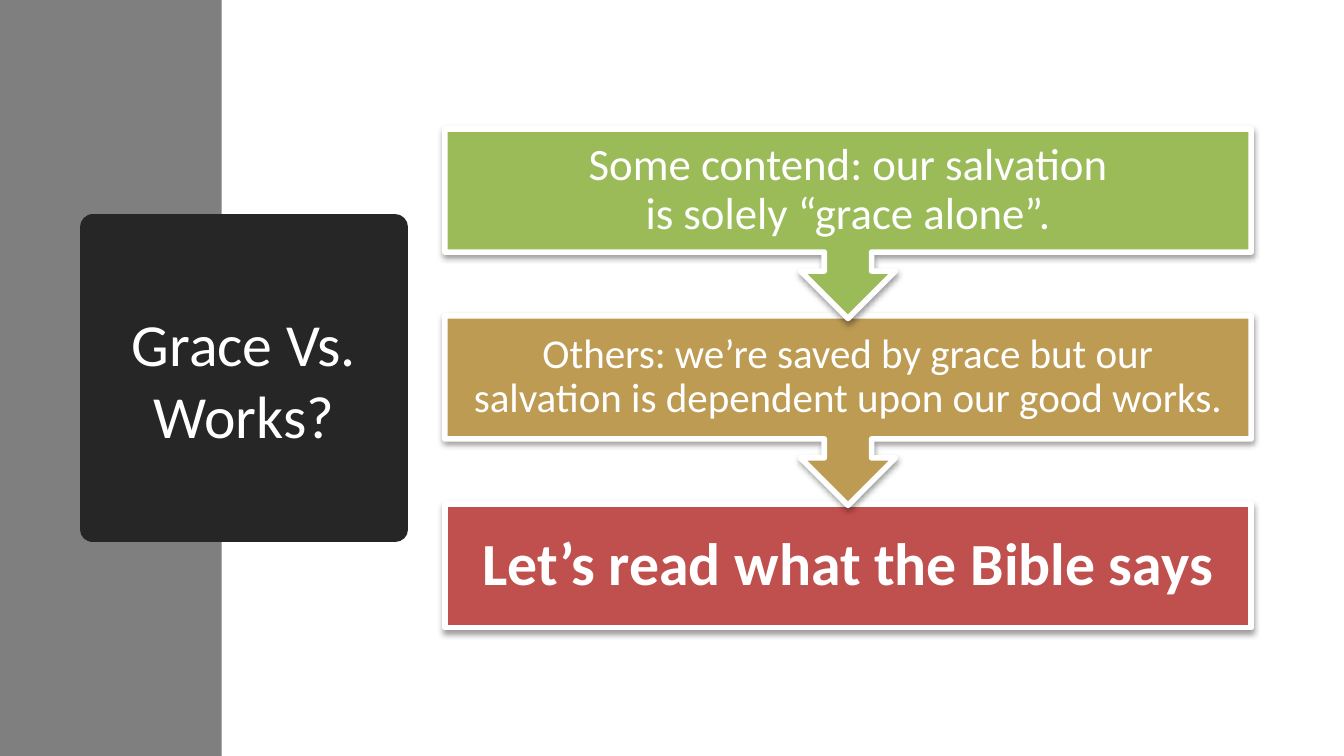
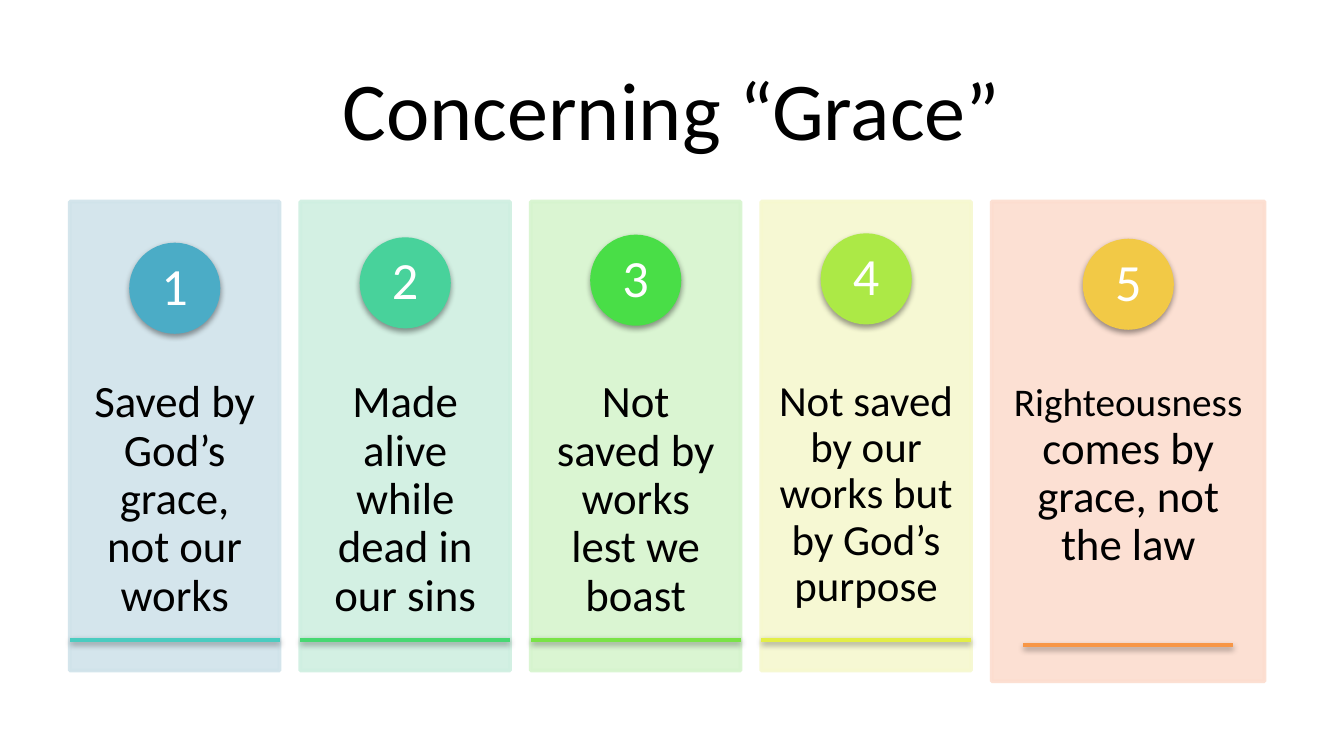
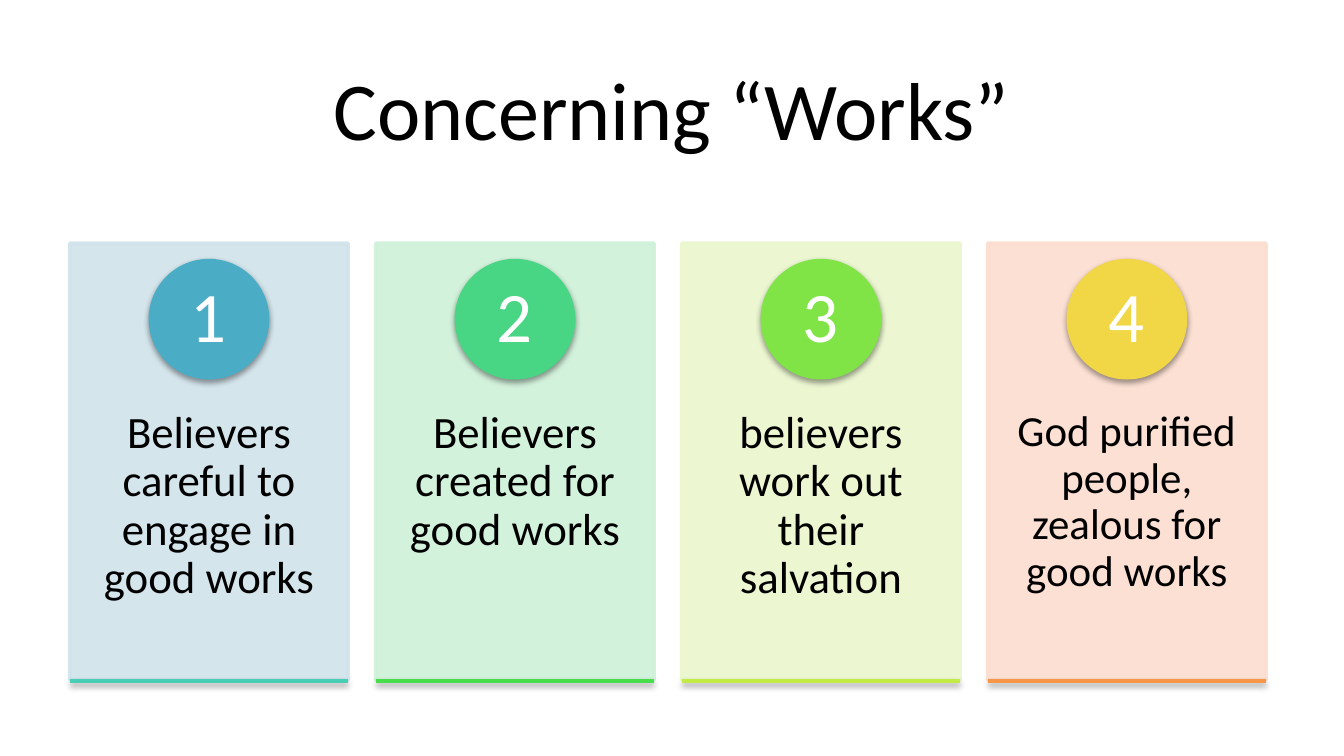
import pptx
import pptx.dml.color
import pptx.enum.shapes
import pptx.enum.text
import pptx.oxml
import pptx.oxml.ns
import pptx.util
from lxml import etree

RGB = pptx.dml.color.RGBColor
SHAPE = pptx.enum.shapes.MSO_SHAPE
MIDDLE = pptx.enum.text.MSO_ANCHOR.MIDDLE
TOP = pptx.enum.text.MSO_ANCHOR.TOP
CENTER = pptx.enum.text.PP_ALIGN.CENTER

FONT = "Calibri"
WHITE = RGB(0xFF, 0xFF, 0xFF)
BLACK = RGB(0x00, 0x00, 0x00)
GRAY = RGB(0x7F, 0x7F, 0x7F)
CHARCOAL = RGB(0x26, 0x26, 0x26)
RED = RGB(0xC0, 0x50, 0x4D)
TAN = RGB(0xBD, 0x9B, 0x53)
GREEN = RGB(0x9B, 0xBB, 0x59)
PALE_BLUE = RGB(0xD0, 0xE3, 0xEA)
PALE_TEAL = RGB(0xCF, 0xEF, 0xE1)
PALE_MINT = RGB(0xCF, 0xF1, 0xD9)
PALE_GREEN = RGB(0xD6, 0xF4, 0xCE)
PALE_LIME = RGB(0xEB, 0xF7, 0xCE)
PALE_YELLOW = RGB(0xF6, 0xF8, 0xCF)
PALE_ORANGE = RGB(0xFC, 0xDD, 0xCF)
BLUE = RGB(0x4B, 0xAC, 0xC6)
TURQUOISE = RGB(0x4A, 0xCC, 0xC0)
AQUA = RGB(0x49, 0xCE, 0xB6)
SEA = RGB(0x48, 0xD2, 0x9B)
MINT = RGB(0x48, 0xD6, 0x84)
EMERALD = RGB(0x47, 0xD8, 0x72)
VIVID_GREEN = RGB(0x47, 0xDD, 0x4B)
BRIGHT_GREEN = RGB(0x49, 0xDE, 0x47)
SPRING = RGB(0x79, 0xE3, 0x46)
GRASS = RGB(0x80, 0xE4, 0x46)
LIME = RGB(0xAC, 0xE9, 0x46)
CHARTREUSE = RGB(0xC3, 0xEB, 0x46)
YELLOW = RGB(0xE3, 0xEE, 0x46)
GOLD = RGB(0xF1, 0xD7, 0x46)
AMBER = RGB(0xF2, 0xC9, 0x46)
ORANGE = RGB(0xF7, 0x96, 0x46)

deck = pptx.Presentation()
deck.slide_width = pptx.util.Inches(10)
deck.slide_height = deck.slide_width * 9 // 16
UNIT = deck.slide_width / 100


def add_shadow(item):
    item.element.spPr.append(pptx.oxml.parse_xml(
        f'<a:effectLst {pptx.oxml.ns.nsdecls("a")}>'
        '<a:outerShdw blurRad="40000" dist="20000" dir="5400000" rotWithShape="0">'
        '<a:srgbClr val="000000"><a:alpha val="38000"/></a:srgbClr>'
        '</a:outerShdw></a:effectLst>'))


def add_block(slide, kind, box, fill, outline, weight, runs, color, insets, anchor=MIDDLE):
    block = slide.shapes.add_shape(kind, *[round(n * UNIT) for n in box])
    block.fill.solid()
    block.fill.fore_color.rgb = fill
    block.line.color.rgb = outline
    block.line.width = pptx.util.Pt(weight)
    frame = block.text_frame
    frame.word_wrap = True
    frame.vertical_anchor = anchor
    frame.margin_left, frame.margin_top, frame.margin_right, frame.margin_bottom = [
        round(n * UNIT) for n in insets]
    paragraph = frame.paragraphs[0]
    paragraph.alignment = CENTER
    paragraph.line_spacing = 0.9
    paragraph.font.name = FONT
    paragraph.font.color.rgb = color
    if len(runs) == 1:
        paragraph.text = runs[0][0]
        paragraph.font.size = pptx.util.Pt(runs[0][1])
    else:
        for words, size in runs:
            run = paragraph.add_run()
            run.text = words
            run.font.size = pptx.util.Pt(size)
    return block


slides = []
for heading, box, size, color, spacing in [
    ("Grace Vs. Works?", (6.9, 16.9, 22.5, 22.5), 32, WHITE, 1.0),
    ("Concerning “Grace”", (6.9, 3, 86.2, 10.9), 44, BLACK, 0.9),
    ("Concerning “Works”", (6.9, 3, 86.2, 10.9), 44, BLACK, 0.9),
]:
    slide = deck.slides.add_slide(deck.slide_layouts[5])
    title = slide.shapes.title
    title.left, title.top, title.width, title.height = [round(n * UNIT) for n in box]
    title.text_frame.text = heading
    title.text_frame.word_wrap = True
    title.text_frame.auto_size = pptx.enum.text.MSO_AUTO_SIZE.NONE
    title.text_frame.vertical_anchor = MIDDLE
    paragraph = title.text_frame.paragraphs[0]
    paragraph.alignment = CENTER
    paragraph.line_spacing = spacing
    paragraph.font.name = FONT
    paragraph.font.size = pptx.util.Pt(size)
    paragraph.font.color.rgb = color
    slides.append(slide)

question, grace, works = slides

badge = question.shapes.title
badge.fill.solid()
badge.fill.fore_color.rgb = CHARCOAL
badge.line.color.rgb = CHARCOAL
badge.line.width = pptx.util.Pt(13.75)
etree.SubElement(badge.line._get_or_add_ln(), pptx.oxml.ns.qn("a:round"))

side_band = question.shapes.add_shape(SHAPE.RECTANGLE, 0, 0, round(16.5 * UNIT), deck.slide_height)
side_band.fill.solid()
side_band.fill.fore_color.rgb = GRAY
side_band.line.fill.background()
side_band.shadow.inherit = False
badge.element.addprevious(side_band.element)

for kind, top, height, fill, words, size, inset in [
    (SHAPE.RECTANGLE, 37.5, 9.2, RED, "Let’s read what the Bible says", 32, 2.5),
    (SHAPE.DOWN_ARROW_CALLOUT, 23.5, 14.1, TAN,
     "Others: we’re saved by grace but our salvation is dependent upon our good works.", 22, 1.7),
    (SHAPE.DOWN_ARROW_CALLOUT, 9.6, 14.1, GREEN,
     "Some contend: our salvation\vis solely “grace alone”.", 24, 1.9),
]:
    step = add_block(question, kind, (33.1, top, 60, height), fill, WHITE, 3,
                     [(words, size)], WHITE, [inset] * 4)
    step.text_frame.paragraphs[0].font.bold = fill == RED
    add_shadow(step)

GRACE_CARDS = [
    (PALE_BLUE, BLUE, TURQUOISE, 18.2, [("Saved by God’s grace, not our works", 24)]),
    (PALE_TEAL, SEA, EMERALD, 17.8, [("Made alive while dead in our sins", 24)]),
    (PALE_GREEN, BRIGHT_GREEN, SPRING, 17.6, [("Not saved by works lest we boast", 24)]),
    (PALE_YELLOW, LIME, YELLOW, 17.5, [("Not saved by our works but by God’s purpose", 23)]),
    (PALE_ORANGE, AMBER, ORANGE, 17.9,
     [("Righteousness", 21), (" ", 20), ("comes by grace, not the law", 24)]),
]
WORKS_CARDS = [
    (PALE_BLUE, BLUE, AQUA, 19.4, [("Believers careful to engage in good works", 24)]),
    (PALE_MINT, MINT, VIVID_GREEN, 19.4, [("Believers created for good works", 24)]),
    (PALE_LIME, GRASS, CHARTREUSE, 19.4, [("believers work out their salvation", 24)]),
    (PALE_ORANGE, GOLD, ORANGE, 19.4, [("God purified people, zealous for good works", 23)]),
]
FIRST_LEFT = 5.2

for slide, cards, last_left, top, rule_width, last_width, heights, text_drops, rule_tops, side, \
        number_size, card_inset, number_inset in [
    (grace, GRACE_CARDS, 73.8, 15, 15.6, 20.3, (34.9, 35.7), (13.2, 13.5), (47.6, 48), 6.5,
     28, 1.2, 0.5),
    (works, WORKS_CARDS, 73.5, 18.1, 20.7, 20.7, (32.5, 32.5), (12.4, 12.4), (50.7, 50.7), 8.7,
     38, 1.6, 0.7),
]:
    pitch = (last_left - FIRST_LEFT) / (len(cards) - 1)
    for index, (card_fill, circle_fill, rule_color, circle_top, runs) in enumerate(cards):
        last = index == len(cards) - 1
        left = FIRST_LEFT + index * pitch
        width = last_width if last else rule_width
        middle = left + width / 2
        card = add_block(slide, SHAPE.RECTANGLE, (left, top, width, heights[last]),
                         card_fill, card_fill, 2, runs, BLACK,
                         (card_inset, text_drops[last], card_inset, 0), TOP)
        for tint in card.element.spPr.iter(pptx.oxml.ns.qn("a:srgbClr")):
            etree.SubElement(tint, pptx.oxml.ns.qn("a:alpha"), val="90000")
        card.shadow.inherit = False

        circle = add_block(slide, SHAPE.OVAL, (middle - side / 2, circle_top, side, side),
                           circle_fill, circle_fill, 2, [(str(index + 1), number_size)], WHITE,
                           (number_inset, 0.1, number_inset, 0.1))
        add_shadow(circle)

        rule = slide.shapes.add_connector(
            pptx.enum.shapes.MSO_CONNECTOR.STRAIGHT,
            *[round(n * UNIT) for n in (middle - rule_width / 2, rule_tops[last],
                                        middle + rule_width / 2, rule_tops[last])])
        rule.line.color.rgb = rule_color
        rule.line.width = pptx.util.Pt(2)
        add_shadow(rule)

deck.save("out.pptx")
